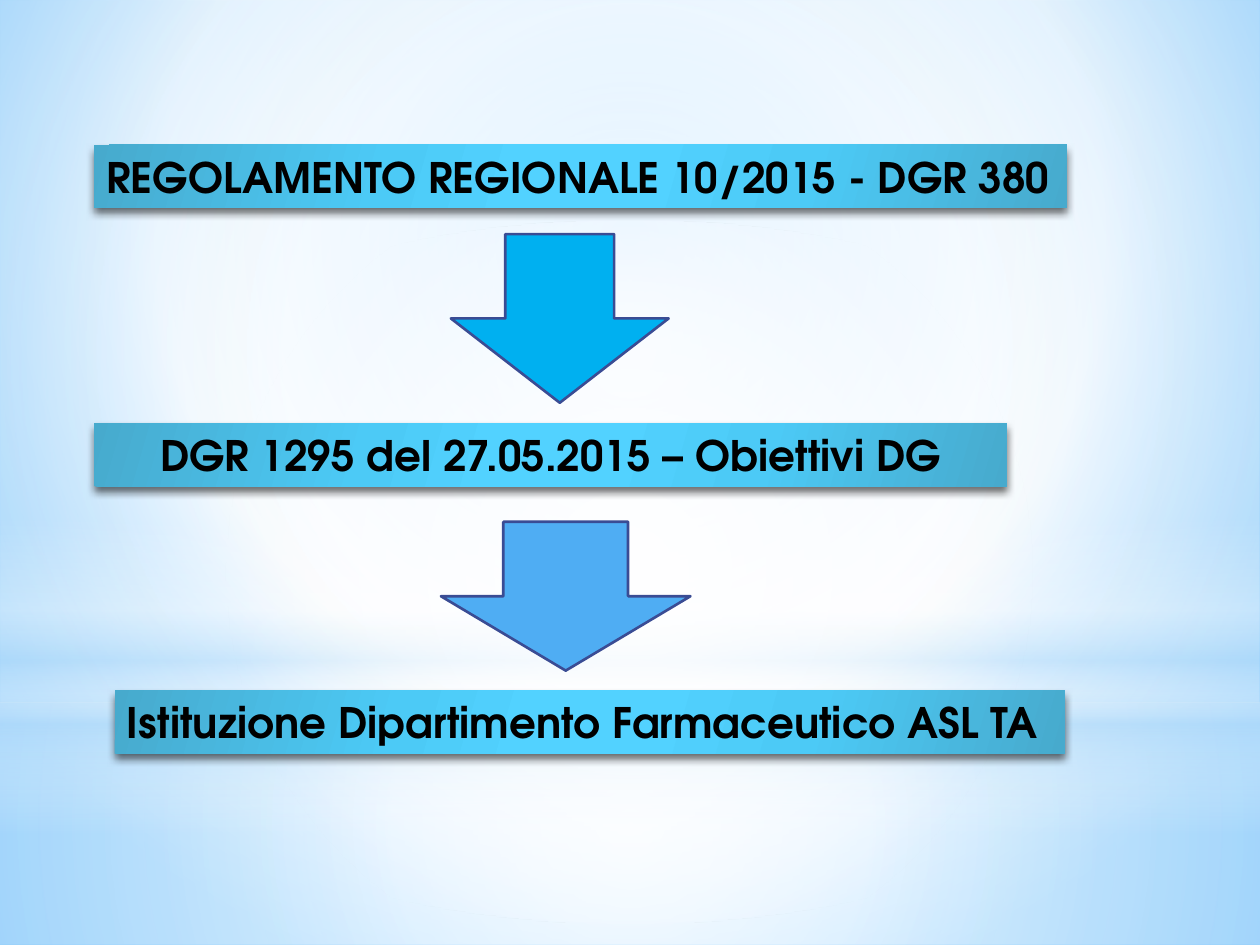
from lxml.etree import SubElement
from pptx import Presentation
from pptx.dml.color import RGBColor
from pptx.enum.shapes import MSO_SHAPE as Shape
from pptx.enum.text import MSO_AUTO_SIZE as AutoSize, PP_ALIGN as Align
from pptx.oxml.ns import qn
from pptx.util import Cm, Pt

FONT = "TeX Gyre Adventor"
COLORS = {
    "white": "FFFFFF",
    "pale": "B4DCFA",
    "sky": "9ED5FF",
    "azure": "5BB9FF",
    "banner_edge": "47AACD",
    "banner_mid": "4CCAF6",
    "banner_core": "52D2FF",
    "arrow_bright": "00B0F0",
    "arrow_soft": "4FADF3",
    "outline": "3A4C94",
    "black": "000000",
}
CENTRE = (50, 50, 50, 50)
BANNER_STOPS = [
    (0, "banner_edge", 100), (30, "banner_mid", 100), (45, "banner_core", 100),
    (55, "banner_core", 100), (73, "banner_mid", 100), (100, "banner_edge", 100),
]


def rgb(name):
    return RGBColor.from_string(COLORS[name])


def add_color(parent, name, opacity):
    color = SubElement(parent, qn("a:srgbClr"), val=COLORS[name])
    if opacity < 100:
        SubElement(color, qn("a:alpha"), val=str(opacity * 1000))


def set_gradient(fill, properties, stops, angle=None, focus=CENTRE):
    """Fill with (position, colour, opacity) stops: linear at an angle, else circular."""
    fill.solid()
    solid = properties.find(qn("a:solidFill"))
    gradient = properties.makeelement(qn("a:gradFill"), {"rotWithShape": "1"})
    properties.replace(solid, gradient)
    stop_list = SubElement(gradient, qn("a:gsLst"))
    for position, name, opacity in stops:
        stop = SubElement(stop_list, qn("a:gs"), pos=str(position * 1000))
        add_color(stop, name, opacity)
    if angle is not None:
        SubElement(gradient, qn("a:lin"), ang=str(angle * 60000), scaled="0")
    else:
        circle = SubElement(gradient, qn("a:path"), path="circle")
        sides = {side: str(value * 1000) for side, value in zip("ltrb", focus)}
        SubElement(circle, qn("a:fillToRect"), sides)


def set_background(slide):
    fill = slide.background.fill
    fill.solid()
    properties = slide.element.find(".//" + qn("p:bgPr"))
    stops = [(0, "sky", 100), (60, "white", 100), (100, "azure", 100)]
    set_gradient(fill, properties, stops, focus=(20, 10, 20, 60))


def add_glow(slide, kind, top, height, stops, angle=None):
    """Add a full-width translucent layer of the backdrop."""
    shape = slide.shapes.add_shape(kind, 0, Cm(top), Cm(25.4), Cm(height))
    shape.shadow.inherit = False
    shape.line.fill.background()
    set_gradient(shape.fill, shape.element.spPr, stops, angle)


def add_shadow(shape):
    shape.shadow.inherit = False
    effects = shape.element.spPr.find(qn("a:effectLst"))
    shadow = SubElement(effects, qn("a:outerShdw"), blurRad=str(Pt(4.5)),
                        dist=str(Pt(3)), dir="5400000", rotWithShape="0")
    add_color(shadow, "black", 57)


def add_banner(slide, text, left, top, width, centred=False):
    box = slide.shapes.add_textbox(Cm(left), Cm(top), Cm(width), Cm(1.27))
    set_gradient(box.fill, box.element.spPr, BANNER_STOPS, angle=16)
    add_shadow(box)
    frame = box.text_frame
    frame.word_wrap = centred
    frame.auto_size = AutoSize.SHAPE_TO_FIT_TEXT
    frame.text = text
    paragraph = frame.paragraphs[0]
    paragraph.alignment = Align.CENTER if centred else Align.LEFT
    font = paragraph.runs[0].font
    font.name, font.size, font.bold = FONT, Pt(24), True
    font.color.rgb = rgb("black")


def add_down_arrow(slide, color, left, top, width, height):
    arrow = slide.shapes.add_shape(
        Shape.DOWN_ARROW, Cm(left), Cm(top), Cm(width), Cm(height))
    arrow.shadow.inherit = False
    arrow.fill.solid()
    arrow.fill.fore_color.rgb = rgb(color)
    arrow.line.color.rgb = rgb("outline")
    arrow.line.width = Pt(1.5)


def add_backdrop(slide):
    set_background(slide)
    add_glow(slide, Shape.RECTANGLE, 14.17, 4.88,
             [(0, "white", 91), (37, "white", 76), (100, "pale", 79)])
    add_glow(slide, Shape.RECTANGLE, 0, 14.17,
             [(0, "white", 89), (48, "white", 62), (100, "pale", 79)])
    add_glow(slide, Shape.RECTANGLE, 10.46, 6.35,
             [(0, "white", 0), (29, "white", 30), (45, "pale", 40),
              (55, "white", 26), (65, "pale", 60), (100, "white", 0)], angle=90)
    add_glow(slide, Shape.OVAL, 4.45, 14.17,
             [(0, "white", 100), (56, "white", 0)])


def main():
    presentation = Presentation()
    presentation.slide_width, presentation.slide_height = Cm(25.4), Cm(19.05)
    slide = presentation.slides.add_slide(presentation.slide_layouts[6])
    add_backdrop(slide)
    add_banner(slide, "REGOLAMENTO REGIONALE 10/2015 - DGR 380", 1.9, 2.92, 19.61)
    add_banner(slide, "DGR 1295 del 27.05.2015 – Obiettivi DG", 1.9, 8.53, 18.39,
               centred=True)
    add_banner(slide, "Istituzione Dipartimento Farmaceutico ASL TA",
               2.31, 13.92, 19.15)
    add_down_arrow(slide, "arrow_bright", 9.09, 4.72, 4.39, 3.4)
    add_down_arrow(slide, "arrow_soft", 8.89, 10.52, 5.03, 3)
    presentation.save("out.pptx")


if __name__ == "__main__":
    main()
